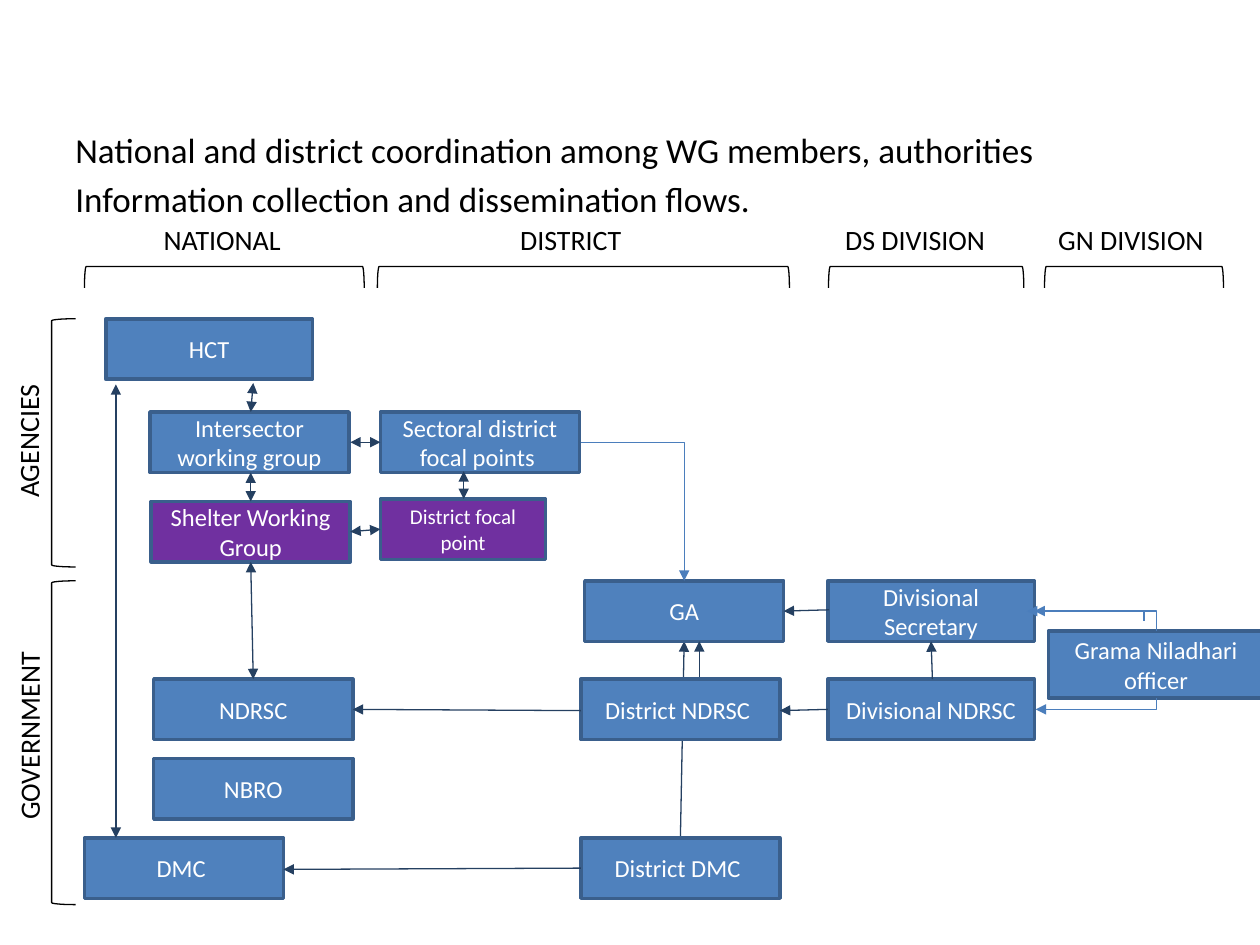
"""Draw the national and district coordination chart."""
import dataclasses

import lxml.etree
import pptx
import pptx.dml.color
import pptx.enum.shapes
import pptx.enum.text
import pptx.oxml.ns
import pptx.util

Inches = pptx.util.Inches
Pt = pptx.util.Pt
Shape = pptx.enum.shapes.MSO_SHAPE
Link = pptx.enum.shapes.MSO_CONNECTOR
Align = pptx.enum.text.PP_ALIGN
Anchor = pptx.enum.text.MSO_ANCHOR
Fit = pptx.enum.text.MSO_AUTO_SIZE
qn = pptx.oxml.ns.qn


@dataclasses.dataclass(frozen=True)
class Theme:
    """Colours and type sizes."""
    font: str = "Calibri"
    black: str = "000000"
    white: str = "FFFFFF"
    blue: str = "4F81BD"
    purple: str = "7030A0"
    edge: str = "3A5F8C"
    navy: str = "254061"
    sky: str = "4B7EBC"
    lead: int = 20
    head: int = 16
    body: int = 14
    small: int = 12
    thin: float = 0.75
    thick: float = 2


def rgb(code):
    """Turn a hex code into a colour."""
    return pptx.dml.color.RGBColor.from_string(code)


def write(frame, text, *, font, size, color, align=Align.LEFT,
          anchor=Anchor.TOP, wrap=True, before=0, fit=Fit.NONE):
    """Fill a frame with one paragraph per line of text."""
    frame.word_wrap = wrap
    frame.auto_size = fit
    frame.vertical_anchor = anchor
    for i, line in enumerate(text.split("\n")):
        para = frame.add_paragraph() if i else frame.paragraphs[0]
        para.alignment = align
        para.space_before = Pt(before)
        run = para.add_run()
        run.text = line
        run.font.name = font
        run.font.size = Pt(size)
        run.font.color.rgb = rgb(color)


class Chart:
    """Hold the theme and the slide, and draw each kind of element."""

    def __init__(self, slide, theme):
        """Keep the slide and its theme."""
        self.slide = slide
        self.theme = theme

    def label(self, text, x, y, w, h, turn=0, size=None, **form):
        """Add plain text."""
        theme = self.theme
        item = self.slide.shapes.add_textbox(*map(Inches, (x, y, w, h)))
        item.rotation = turn
        write(item.text_frame, text, font=theme.font, size=size or theme.head,
              color=theme.black, **form)

    def box(self, text, x, y, w=1.58, h=0.48, fill=None, size=None):
        """Add a filled box with centred text."""
        theme = self.theme
        item = self.slide.shapes.add_shape(Shape.RECTANGLE,
                                           *map(Inches, (x, y, w, h)))
        item.shadow.inherit = False
        item.fill.solid()
        item.fill.fore_color.rgb = rgb(fill or theme.blue)
        item.line.color.rgb = rgb(theme.edge)
        item.line.width = Pt(theme.thick)
        write(item.text_frame, text, font=theme.font, size=size or theme.body,
              color=theme.white, align=Align.CENTER, anchor=Anchor.MIDDLE)

    def brace(self, x, y, w, h, turn=0):
        """Add a bracket, turned about its centre."""
        item = self.slide.shapes.add_shape(Shape.LEFT_BRACKET,
                                           *map(Inches, (x, y, w, h)))
        item.rotation = turn
        item.shadow.inherit = False
        item.fill.background()
        item.line.color.rgb = rgb(self.theme.black)
        item.line.width = Pt(self.theme.thin)

    def arrow(self, x1, y1, x2, y2, ends=("tail",), bent=False):
        """Add an arrow; a bent one runs across first, then down or up."""
        theme = self.theme
        kind = Link.ELBOW if bent else Link.STRAIGHT
        item = self.slide.shapes.add_connector(kind,
                                               *map(Inches, (x1, y1, x2, y2)))
        item.line.color.rgb = rgb(theme.sky if bent else theme.navy)
        item.line.width = Pt(theme.thin)
        props = item._element.spPr
        if bent:
            props.find(qn("a:prstGeom")).set("prst", "bentConnector2")
        for end in ends:
            lxml.etree.SubElement(props.find(qn("a:ln")), qn(f"a:{end}End"),
                                  type="triangle")
        lxml.etree.SubElement(props, qn("a:effectLst"))


def main():
    """Build and save the slide."""
    deck = pptx.Presentation()
    deck.slide_width, deck.slide_height = Inches(10), Inches(7.5)
    theme = Theme()
    chart = Chart(deck.slides.add_slide(deck.slide_layouts[6]), theme)
    both = ("head", "tail")

    chart.arrow(5.4, 6.65, 5.43, 5.09)
    chart.label("National and district coordination among WG members, authorities\n"
                "Information collection and dissemination flows.",
                0.5, 0.97, 9, 6.01, size=theme.lead, before=4)

    for text, x, w, mid, span, wrap in (
            ("NATIONAL", 1.2, 1.14, 1.78, 2.22, False),
            ("DISTRICT", 4.03, 1.01, 4.63, 3.27, False),
            ("DS DIVISION", 6.61, 1.33, 7.35, 1.55, False),
            ("GN DIVISION", 8.3, 1.45, 9, 1.42, True)):
        chart.label(text, x, 1.72, w, 0.37, wrap=wrap, fit=Fit.SHAPE_TO_FIT_TEXT)
        chart.brace(mid - 0.17 / 2, 2.2 - span / 2, 0.17, span, turn=90)

    for text, x, y, w, top, span in (
            ("AGENCIES", -0.75, 2.89, 1.95, 2.53, 1.97),
            ("GOVERNMENT", -1.04, 5.15, 2.54, 4.61, 2.57)):
        chart.label(text, x, y, w, 0.37, turn=270, fit=Fit.SHAPE_TO_FIT_TEXT)
        chart.brace(0.41, top, 0.19, span)

    wide = 1.64
    chart.box("HCT", 0.84, 2.53, wide)
    chart.box("Intersector working group", 1.19, 3.27)
    chart.box("Sectoral district focal points ", 3.02, 3.27)
    chart.box("Shelter Working Group", 1.2, 3.98, fill=theme.purple)
    chart.box("District focal point", 3.02, 3.96, 1.31, fill=theme.purple,
              size=theme.small)
    chart.box("GA", 4.64, 4.61)
    chart.box("Divisional Secretary", 6.57, 4.61, wide)
    chart.box("Grama Niladhari officer", 8.32, 5.01, 1.71, 0.53)
    chart.box("NDRSC", 1.22, 5.39)
    chart.box("District NDRSC ", 4.61, 5.39)
    chart.box("Divisional NDRSC", 6.57, 5.39, wide)
    chart.box("NBRO", 1.22, 6.02)
    chart.box("DMC ", 0.67, 6.65)
    chart.box("District DMC ", 4.61, 6.65)

    for ends in ((2.01, 3.04, 1.99, 3.27), (1.99, 3.75, 1.99, 3.98),
                 (2.78, 3.51, 3.02, 3.51), (2.78, 4.22, 3.02, 4.2),
                 (3.68, 3.74, 3.68, 3.96), (1.99, 4.46, 2.01, 5.39),
                 (0.92, 3.05, 0.92, 6.65)):
        chart.arrow(*ends, ends=both)
    for ends in ((7.4, 5.39, 7.39, 5.09), (6.57, 5.63, 6.19, 5.64),
                 (4.61, 6.89, 2.25, 6.9), (6.58, 4.84, 6.22, 4.85),
                 (5.55, 5.37, 5.55, 5.09), (4.61, 5.64, 2.8, 5.63)):
        chart.arrow(*ends)
    for ends in ((8.15, 4.85, 9.08, 4.93), (8.22, 5.63, 9.18, 5.54),
                 (8.21, 4.85, 9.18, 5.01)):
        chart.arrow(*ends, ends=("head",), bent=True)
    chart.arrow(4.61, 3.51, 5.43, 4.61, bent=True)

    deck.save("out.pptx")


if __name__ == "__main__":
    main()
